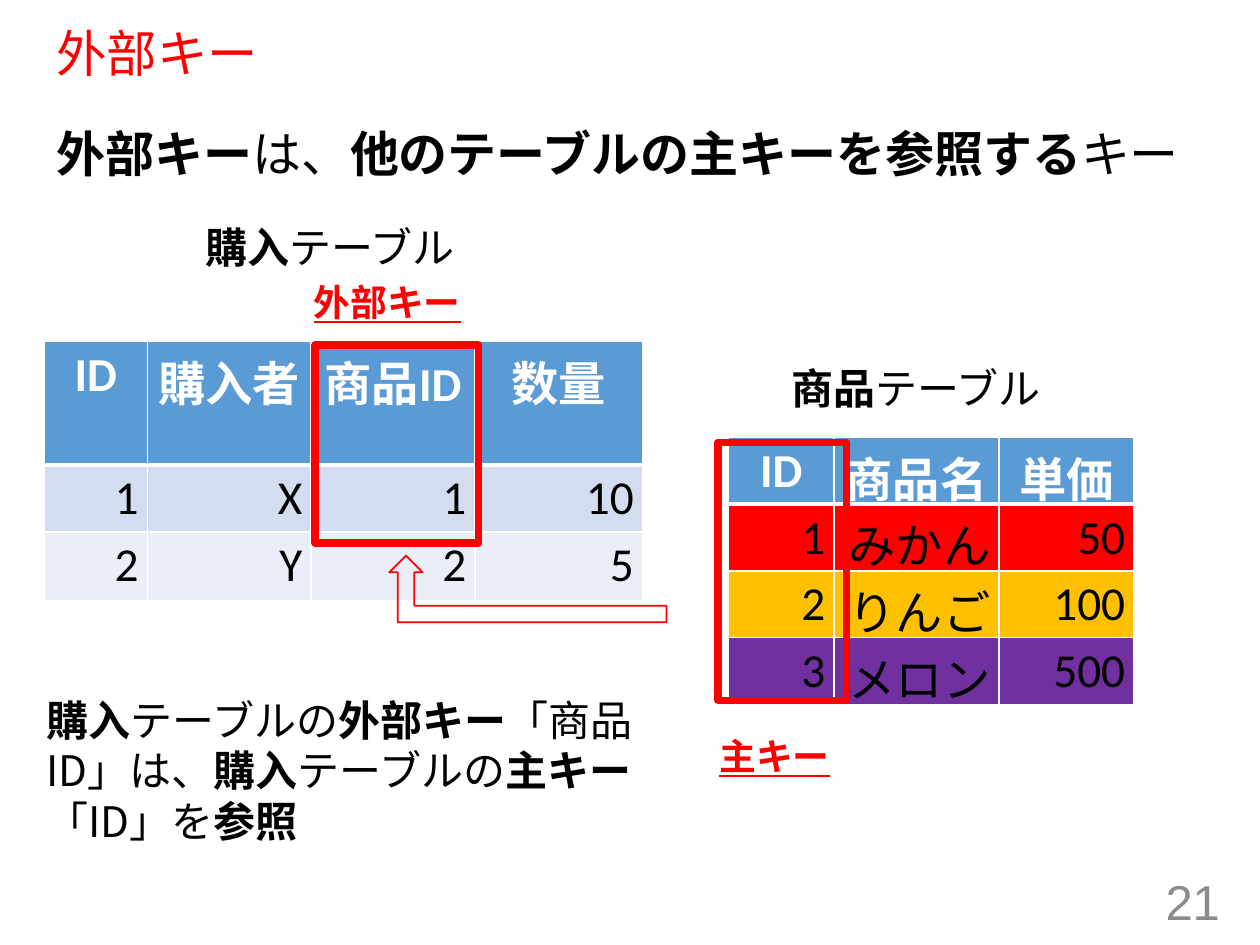
import pptx
import pptx.util
import pptx.dml.color
import pptx.enum.shapes
import pptx.enum.text
import pptx.oxml
import pptx.oxml.ns
import lxml.etree

Inches = pptx.util.Inches
Pt = pptx.util.Pt
ALIGN = pptx.enum.text.PP_ALIGN
ANCHOR = pptx.enum.text.MSO_ANCHOR
SHAPE = pptx.enum.shapes.MSO_SHAPE
qn = pptx.oxml.ns.qn
RED = "FF0000"
GOTHIC = "Noto Sans CJK JP"
INSETS = (0.07, 0.04)


def rgb(value):
    return pptx.dml.color.RGBColor.from_string(value)


def style(p, size, font, color, bold=None):
    p.font.size = Pt(size)
    p.font.name = font
    p.font.color.rgb = rgb(color)
    p.font.bold = bold


def set_margins(box, insets):
    box.margin_left = box.margin_right = Inches(insets[0])
    box.margin_top = box.margin_bottom = Inches(insets[1])


def add_text(s, at, parts, size, font=GOTHIC, color="000000", insets=INSETS,
             before=10, align=ALIGN.LEFT, anchor=ANCHOR.TOP, underline=None):
    tf = s.shapes.add_textbox(*map(Inches, at)).text_frame
    tf.word_wrap = True
    tf.vertical_anchor = anchor
    set_margins(tf, insets)
    p = tf.paragraphs[0]
    p.alignment = align
    p.space_before = Pt(before)
    style(p, size, font, color)
    p.font.underline = underline
    for text, bold in parts:
        r = p.add_run()
        r.text = text
        r.font.bold = bold
    return p


def add_border(cell, side, width):
    tc_pr = cell._tc.get_or_add_tcPr()
    ln = lxml.etree.SubElement(tc_pr, qn("a:" + side), w=str(Pt(width)))
    fill = lxml.etree.SubElement(ln, qn("a:solidFill"))
    lxml.etree.SubElement(fill, qn("a:srgbClr"), val="FFFFFF")


def fill_cell(cell, color, opacity):
    cell.fill.solid()
    cell.fill.fore_color.rgb = rgb(color)
    if opacity < 100:
        clr = cell._tc.tcPr.find(".//" + qn("a:srgbClr"))
        lxml.etree.SubElement(clr, qn("a:alpha"), val=str(opacity * 1000))


def add_table(s, at, widths, heights, rows, fills):
    size = (sum(widths), sum(heights))
    table = s.shapes.add_table(len(rows), len(widths), *map(Inches, at + size)).table
    for column, width in zip(table.columns, widths):
        column.width = Inches(width)
    for i, (row, height, fill) in enumerate(zip(rows, heights, fills)):
        table.rows[i].height = Inches(height)
        header = i == 0
        for j, text in enumerate(row):
            cell = table.cell(i, j)
            set_margins(cell, INSETS)
            p = cell.text_frame.paragraphs[0]
            p.add_run().text = text
            p.alignment = ALIGN.CENTER if header else ALIGN.RIGHT
            style(p, 27, "Calibri", "FFFFFF" if header else "000000", header)
            for side in ("lnL", "lnR", "lnT", "lnB"):
                thick = (header and side == "lnB") or (i == 1 and side == "lnT")
                add_border(cell, side, 3 if thick else 1)
            fill_cell(cell, *fill)


def add_outline(s, kind, at, width):
    sp = s.shapes.add_shape(kind, *map(Inches, at))
    sp.shadow.inherit = False
    sp.fill.background()
    sp.line.color.rgb = rgb(RED)
    sp.line.width = Pt(width)
    return sp


def main():
    prs = pptx.Presentation()
    prs.slide_width, prs.slide_height = Inches(10), Inches(7.5)
    s = prs.slides.add_slide(prs.slide_layouts[6])

    title = add_text(s, (0.35, 0.19, 9.25, 0.51), [("外部キー", False)], 28.8, "Arial", RED,
                     insets=(0.1, 0.05), before=0, anchor=ANCHOR.MIDDLE)
    title.line_spacing = 0.9
    add_text(s, (0.35, 0.93, 9.25, 5.83),
             [("外部キー", True), ("は、", False),
              ("他のテーブルの主キーを参照する", True), ("キー", False)],
             28, "Arial", insets=(0.1, 0.05))
    add_text(s, (7.53, 6.95, 2.25, 0.4), [("21", False)], 28, "Arial", "8C8C8C",
             insets=(0.1, 0.05), before=0, align=ALIGN.RIGHT, anchor=ANCHOR.MIDDLE)

    add_table(s, (5.78, 3.47), (0.84, 1.31, 1.07), (0.42,) * 4,
              [("ID", "商品名", "単価"), ("1", "みかん", "50"),
               ("2", "りんご", "100"), ("3", "メロン", "500")],
              [("5B9BD5", 100), (RED, 15), ("FFC000", 20), ("7030A0", 20)])
    add_outline(s, SHAPE.RECTANGLE, (5.7, 3.51, 1.02, 2.05), 4.25)

    add_table(s, (0.35, 2.71), (0.82, 1.3, 1.3, 1.33), (0.53, 0.53, 0.55),
              [("ID", "購入者", "商品ID", "数量"), ("1", "X", "1", "10"),
               ("2", "Y", "2", "5")],
              [("5B9BD5", 100), ("D2DEEF", 100), ("EAEFF7", 100)])
    add_outline(s, SHAPE.RECTANGLE, (2.5, 2.74, 1.3, 1.57), 4.25)

    arrow = add_outline(s, SHAPE.BENT_UP_ARROW, (3.09, 4.41, 2.2, 0.53), 1)
    arrow._element.spPr.xfrm.set("flipH", "1")

    add_text(s, (0.3, 5.47, 4.99, 1.88),
             [("購入", True), ("テーブルの", False), ("外部キー", True),
              ("「商品ID」は、", False), ("購入", True), ("テーブルの", False),
              ("主キー", True), ("「ID」を", False), ("参照", True)], 24)
    for x, y, key in ((5.64, 5.78, "主キー"), (2.42, 2.18, "外部キー")):
        add_text(s, (x, y, 2.68, 0.48), [(key, True)], 21, "Calibri", RED, underline=True)
    for x, y, name in ((1.56, 1.72, "購入"), (6.21, 2.84, "商品")):
        add_text(s, (x, y, 2.94, 0.48), [(name, True), ("テーブル", False)], 24)

    prs.save("out.pptx")


if __name__ == "__main__":
    main()
